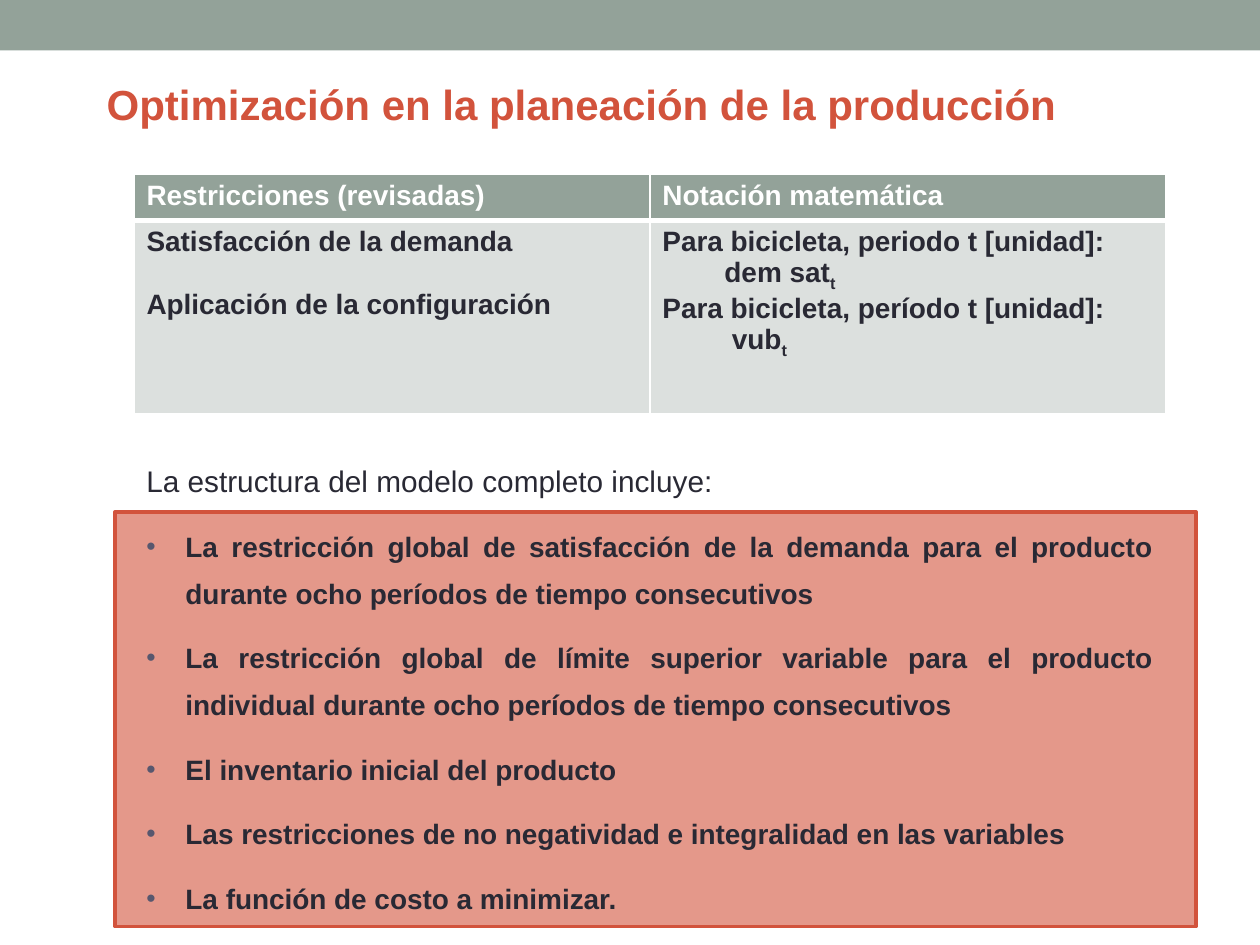
from lxml import etree
from pptx import Presentation
from pptx.dml.color import RGBColor
from pptx.enum import shapes, text
from pptx.oxml import ns
from pptx.util import Cm, Pt

SAGE = RGBColor(0x93, 0xA2, 0x99)
PALE = RGBColor(0xDC, 0xE0, 0xDE)
RED = RGBColor(0xD2, 0x53, 0x3C)
SALMON = RGBColor(0xE4, 0x98, 0x8A)
INK = RGBColor(0x29, 0x29, 0x34)
BULLET = RGBColor(0x57, 0x57, 0x6E)
WHITE = RGBColor(0xFF, 0xFF, 0xFF)

HEADINGS = ["Restricciones (revisadas)", "Notación matemática"]
CONSTRAINTS = [
    ("Satisfacción de la demanda", "", 0, 0),
    ("Aplicación de la configuración", "", 0, 18),
]
NOTATION = [
    ("Para bicicleta, periodo t [unidad]:", "", 0, 0),
    ("dem sat", "t", 1.25, 0),
    ("Para bicicleta, período t [unidad]:", "", 0, 0),
    ("vub", "t", 1.4, 0),
]
COMPONENTS = [
    "La restricción global de satisfacción de la demanda para el producto "
    "durante ocho períodos de tiempo consecutivos",
    "La restricción global de límite superior variable para el producto "
    "individual durante ocho períodos de tiempo consecutivos",
    "El inventario inicial del producto",
    "Las restricciones de no negatividad e integralidad en las variables",
    "La función de costo a minimizar.",
]


def add_run(paragraph, words, color, size=16, bold=True):
    run = paragraph.add_run()
    run.text = words
    run.font.color.rgb = color
    for name, value in {"name": "Arial", "size": Pt(size), "bold": bold}.items():
        setattr(run.font, name, value)
    return run


def add_element(parent, tag, **attributes):
    return etree.SubElement(parent, ns.qn(tag), attributes)


def next_paragraph(frame, index):
    return frame.add_paragraph() if index else frame.paragraphs[0]


def add_panel(slide, box, fill, line=None):
    panel = slide.shapes.add_shape(shapes.MSO_SHAPE.RECTANGLE, *map(Cm, box))
    panel.shadow.inherit = False
    panel.fill.solid()
    panel.fill.fore_color.rgb = fill
    if line is None:
        panel.line.fill.background()
    else:
        panel.line.color.rgb = line
        panel.line.width = Pt(2.08)


def add_frame(slide, box):
    frame = slide.shapes.add_textbox(*map(Cm, box)).text_frame
    frame.word_wrap = True
    return frame


def add_title(slide, box):
    paragraph = add_frame(slide, box).paragraphs[0]
    add_run(paragraph, "Optimización en la planeación de la producción", RED, 24)


def style_cell(cell, fill, bottom):
    properties = cell._tc.get_or_add_tcPr()
    for side, width in {"L": 1, "R": 1, "T": 1, "B": bottom}.items():
        border = add_element(properties, f"a:ln{side}", w=str(Pt(width)))
        add_element(add_element(border, "a:solidFill"), "a:srgbClr", val=str(WHITE))
    cell.fill.solid()
    cell.fill.fore_color.rgb = fill


def add_constraint_table(slide, box):
    left, top, width, height = box
    header_height = 0.93
    table = slide.shapes.add_table(2, 2, *map(Cm, box)).table
    table.rows[0].height = Cm(header_height)
    table.rows[1].height = Cm(height - header_height)
    for column, (heading, entries) in enumerate(zip(HEADINGS, (CONSTRAINTS, NOTATION))):
        table.columns[column].width = Cm(width / 2)
        header, body = table.cell(0, column), table.cell(1, column)
        style_cell(header, SAGE, 3)
        style_cell(body, PALE, 1)
        add_run(header.text_frame.paragraphs[0], heading, WHITE)
        for index, (words, subscript, indent, gap) in enumerate(entries):
            paragraph = next_paragraph(body.text_frame, index)
            paragraph.space_before = Pt(gap)
            paragraph._p.get_or_add_pPr().set("marL", str(Cm(indent)))
            add_run(paragraph, words, INK)
            if subscript:
                run = add_run(paragraph, subscript, INK)
                run.font._element.set("baseline", "-25000")


def add_bullet(paragraph):
    properties = paragraph._p.get_or_add_pPr()
    properties.set("marL", str(Cm(0.79)))
    properties.set("indent", str(Cm(-0.79)))
    add_element(add_element(properties, "a:buClr"), "a:srgbClr", val=str(BULLET))
    add_element(properties, "a:buSzPct", val="95000")
    add_element(properties, "a:buFont", typeface="Arial")
    add_element(properties, "a:buChar", char="•")


def add_model_structure(slide, box):
    left, top, width, height = box
    add_panel(slide, (left - 0.38, top + 1.4, 21.79, 8.36), SALMON, RED)
    frame = add_frame(slide, box)
    spacing = {
        "alignment": text.PP_ALIGN.JUSTIFY,
        "line_spacing": 1.4,
        "space_before": Pt(10),
    }
    for index, words in enumerate(["La estructura del modelo completo incluye:"] + COMPONENTS):
        paragraph = next_paragraph(frame, index)
        for name, value in spacing.items():
            setattr(paragraph, name, value)
        if index:
            add_bullet(paragraph)
            add_run(paragraph, words, INK)
        else:
            add_run(paragraph, words, INK, 17, False)


def main():
    deck = Presentation()
    deck.slide_width, deck.slide_height = Cm(25.4), Cm(19.05)
    slide = deck.slides.add_slide(deck.slide_layouts[6])
    add_panel(slide, (0, 0, 25.4, 1.02), SAGE)
    add_title(slide, (1.9, 1.45, 22.2, 1.27))
    add_constraint_table(slide, (2.7, 3.51, 20.8, 4.82))
    add_model_structure(slide, (2.7, 8.92, 20.8, 9.75))
    deck.save("out.pptx")


if __name__ == "__main__":
    main()
